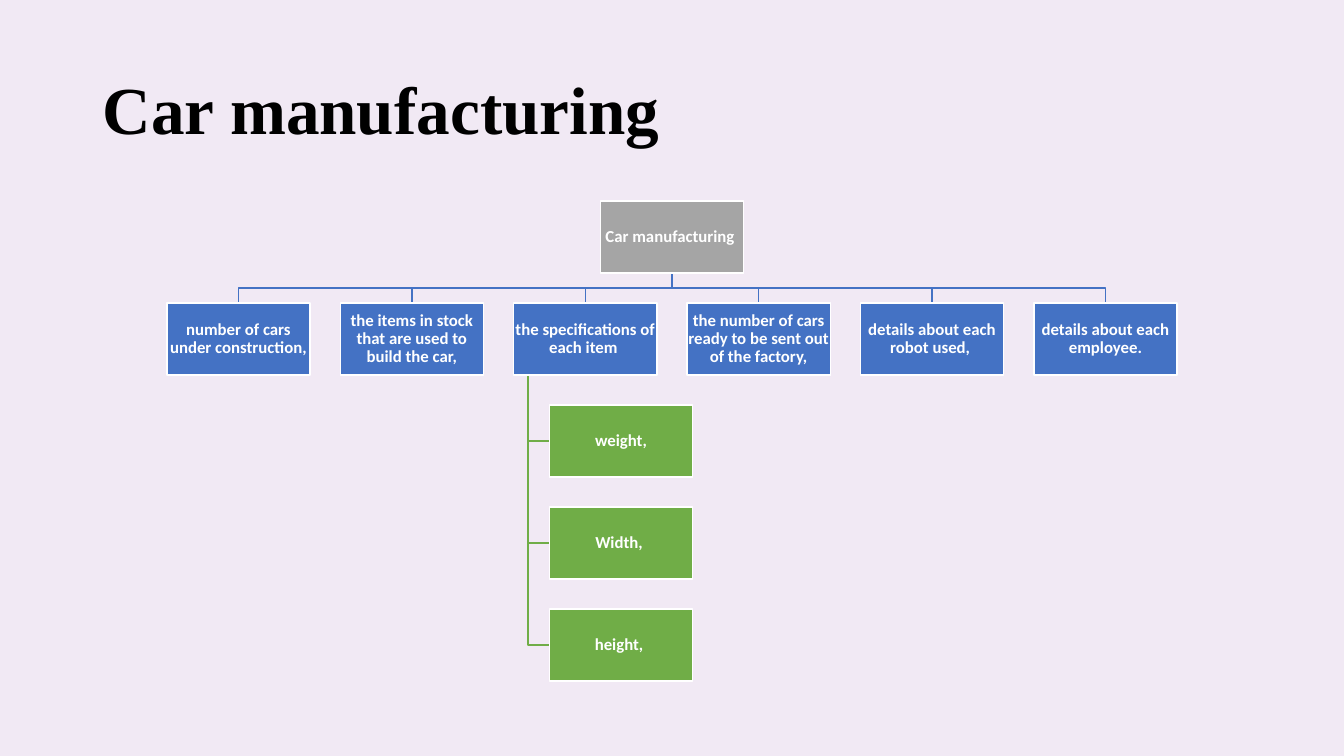
from dataclasses import dataclass

from pptx import Presentation
from pptx.dml.color import RGBColor
from pptx.enum.shapes import MSO_SHAPE
from pptx.enum.text import MSO_ANCHOR, MSO_AUTO_SIZE, PP_ALIGN
from pptx.util import Cm, Pt


@dataclass(frozen=True)
class Theme:
    background: RGBColor = RGBColor.from_string("F1E9F4")
    title: RGBColor = RGBColor.from_string("000000")
    root: RGBColor = RGBColor.from_string("A5A5A5")
    branch: RGBColor = RGBColor.from_string("4472C4")
    leaf: RGBColor = RGBColor.from_string("70AD47")
    white: RGBColor = RGBColor.from_string("FFFFFF")
    title_font: str = "Times New Roman"
    box_font: str = "Calibri"
    title_size: Pt = Pt(48)
    box_size: Pt = Pt(12)
    line_width: Pt = Pt(1)


THEME = Theme()

SLIDE_WIDTH, SLIDE_HEIGHT = Cm(33.87), Cm(19.05)
BOX_WIDTH, BOX_HEIGHT = Cm(3.61), Cm(1.81)
COLUMN_PITCH, ROW_PITCH = Cm(4.37), Cm(2.57)
CHART_TOP = Cm(5.07)
LEAF_INDENT, TRUNK_INDENT = Cm(0.9), Cm(0.36)
BOX_INSET = Cm(0.03)

BRANCHES = [
    "number of cars under construction,",
    "the items in stock that are used to build the car,",
    "the specifications of each item ",
    "the number of cars ready to be sent out of the factory,",
    "details about each robot used, ",
    "details about each employee.",
]
LEAVES = ["weight,", "Width, ", "height, "]
LEAF_PARENT = 2


def add_text(para, text, font, size, color):
    para.line_spacing = 0.9
    span = para.add_run()
    span.text = text
    span.font.name = font
    span.font.size = size
    span.font.bold = True
    span.font.color.rgb = color


def add_title(page, text):
    title = page.shapes.title
    title.left, title.top = Cm(2.33), Cm(1.01)
    title.width, title.height = Cm(29.21), Cm(3.68)
    frame = title.text_frame
    frame.auto_size = MSO_AUTO_SIZE.NONE
    frame.vertical_anchor = MSO_ANCHOR.MIDDLE
    para = frame.paragraphs[0]
    para.alignment = PP_ALIGN.LEFT
    add_text(para, text, THEME.title_font, THEME.title_size, THEME.title)


def add_box(page, left, top, text, color):
    box = page.shapes.add_shape(MSO_SHAPE.RECTANGLE, left, top, BOX_WIDTH, BOX_HEIGHT)
    box.shadow.inherit = False
    box.fill.solid()
    box.fill.fore_color.rgb = color
    box.line.color.rgb = THEME.white
    box.line.width = THEME.line_width
    frame = box.text_frame
    frame.word_wrap = True
    frame.vertical_anchor = MSO_ANCHOR.MIDDLE
    frame.margin_left = frame.margin_right = BOX_INSET
    frame.margin_top = frame.margin_bottom = BOX_INSET
    para = frame.paragraphs[0]
    para.alignment = PP_ALIGN.CENTER
    add_text(para, text, THEME.box_font, THEME.box_size, THEME.white)


def add_elbow(page, points, color):
    builder = page.shapes.build_freeform(*points[0])
    builder.add_line_segments(points[1:], close=False)
    elbow = builder.convert_to_shape()
    elbow.shadow.inherit = False
    elbow.fill.background()
    elbow.line.color.rgb = color
    elbow.line.width = THEME.line_width


def add_hierarchy(page):
    center = SLIDE_WIDTH // 2
    half_box = BOX_WIDTH // 2
    first_left = center - half_box - COLUMN_PITCH * (len(BRANCHES) - 1) // 2
    branch_lefts = [first_left + COLUMN_PITCH * column for column in range(len(BRANCHES))]
    branch_top = CHART_TOP + ROW_PITCH
    root_bottom = CHART_TOP + BOX_HEIGHT
    bar = (root_bottom + branch_top) // 2
    parent_left = branch_lefts[LEAF_PARENT]
    trunk = parent_left + TRUNK_INDENT
    leaf_left = parent_left + LEAF_INDENT
    leaf_tops = [branch_top + ROW_PITCH * row for row in range(1, len(LEAVES) + 1)]

    for left in branch_lefts:
        middle = left + half_box
        points = [(center, root_bottom), (center, bar), (middle, bar), (middle, branch_top)]
        add_elbow(page, points, THEME.branch)
    for top in leaf_tops:
        middle = top + BOX_HEIGHT // 2
        points = [(trunk, branch_top + BOX_HEIGHT), (trunk, middle), (leaf_left, middle)]
        add_elbow(page, points, THEME.leaf)

    add_box(page, center - half_box, CHART_TOP, "Car manufacturing ", THEME.root)
    for left, text in zip(branch_lefts, BRANCHES):
        add_box(page, left, branch_top, text, THEME.branch)
    for top, text in zip(leaf_tops, LEAVES):
        add_box(page, leaf_left, top, text, THEME.leaf)


def main():
    deck = Presentation()
    deck.slide_width, deck.slide_height = SLIDE_WIDTH, SLIDE_HEIGHT
    page = deck.slides.add_slide(deck.slide_layouts.get_by_name("Title Only"))
    page.background.fill.solid()
    page.background.fill.fore_color.rgb = THEME.background
    add_title(page, "Car manufacturing")
    add_hierarchy(page)
    deck.save("out.pptx")


if __name__ == "__main__":
    main()
